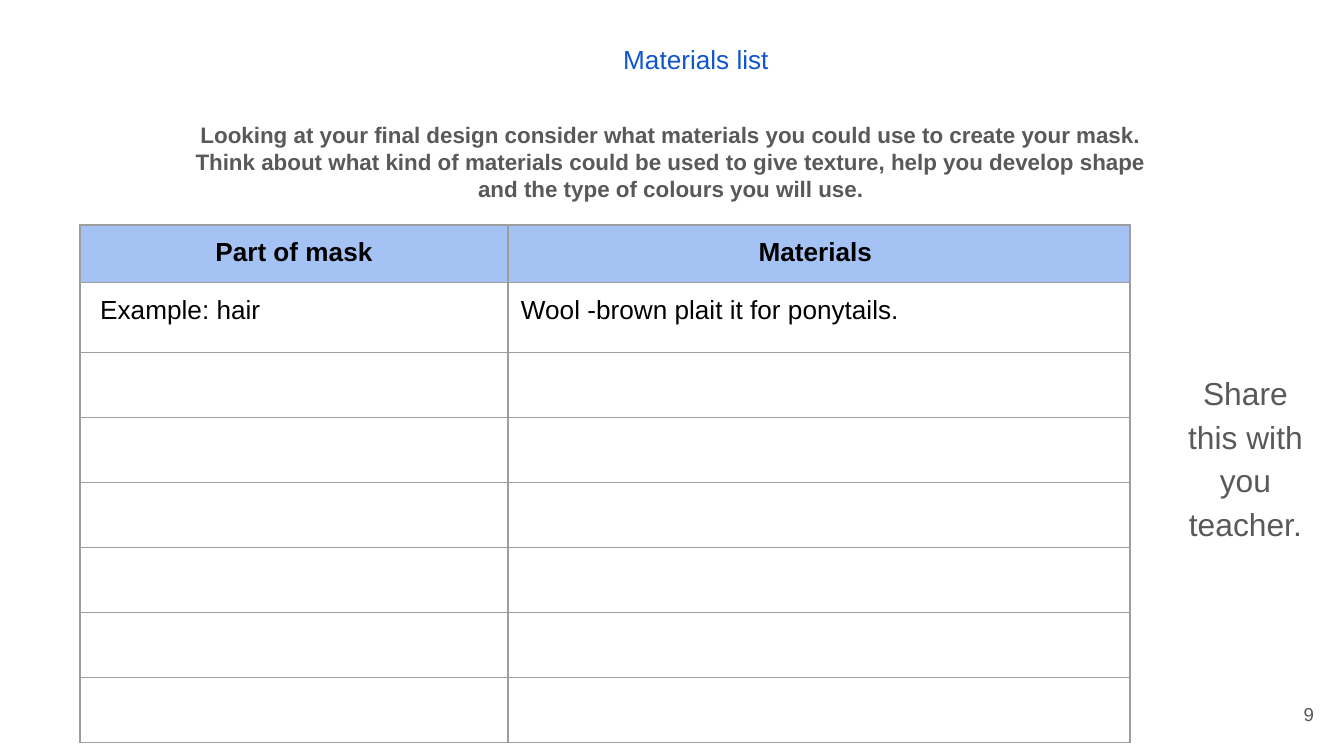
import pptx
import pptx.util
import pptx.dml.color
import pptx.enum.text
from lxml import etree

# Content
TITLE = "Materials list"
INTRO = [
    "Looking at your final design consider what materials you could use to create your mask.",
    "Think about what kind of materials could be used to give texture, "
    "help you develop shape and the type of colours you will use.",
]
REMINDER = "Share this with you teacher."
PAGE = "9"
HEADER = ["Part of mask", "Materials "]
EXAMPLE = [" Example: hair", "Wool -brown plait it for ponytails."]
EMPTY_ROWS = 6
ROWS = [HEADER, EXAMPLE] + [["", ""]] * EMPTY_ROWS

# Layout in px
SCALE = 914400 / 134.4
SLIDE = (1344, 756)
TABLE_AT = (80, 225)
COLS = [428, 622]
HEIGHTS = [56, 70] + [65] * EMPTY_ROWS
INSET = 13

COLORS = {"title": "1155CC", "grey": "595959", "black": "000000",
          "header": "A4C2F4", "border": "9E9E9E"}
FONT = "Arial"
ALIGN = pptx.enum.text.PP_ALIGN
ANCHOR = pptx.enum.text.MSO_ANCHOR


def px(n):
    return pptx.util.Emu(round(n * SCALE))


def rgb(name):
    return pptx.dml.color.RGBColor.from_string(COLORS[name])


def write(tf, lines, size=14, color="grey", bold=False, align=ALIGN.CENTER, spacing=None):
    for i, line in enumerate(lines):
        p = tf.add_paragraph() if i else tf.paragraphs[0]
        p.alignment = align
        if spacing:
            p.line_spacing = spacing
        r = p.add_run()
        r.text = line
        r.font.name = FONT
        r.font.size = pptx.util.Pt(size)
        r.font.bold = bold
        r.font.color.rgb = rgb(color)


def add_text(s, box, lines, inset_y=INSET, anchor=ANCHOR.TOP, **fmt):
    tf = s.shapes.add_textbox(*map(px, box)).text_frame
    tf.word_wrap = True
    tf.vertical_anchor = anchor
    tf.margin_left = tf.margin_right = px(INSET)
    tf.margin_top = tf.margin_bottom = px(inset_y)
    write(tf, lines, **fmt)


def add_borders(cell):
    ns = "{http://schemas.openxmlformats.org/drawingml/2006/main}"
    tcPr = cell._tc.get_or_add_tcPr()
    for i, side in enumerate(("lnL", "lnR", "lnT", "lnB")):
        ln = etree.Element(ns + side, w=str(pptx.util.Pt(0.75)))
        fill = etree.SubElement(ln, ns + "solidFill")
        etree.SubElement(fill, ns + "srgbClr", val=COLORS["border"])
        tcPr.insert(i, ln)


def add_materials_table(s):
    frame = s.shapes.add_table(len(ROWS), len(COLS), *map(px, TABLE_AT),
                               px(sum(COLS)), px(sum(HEIGHTS)))
    table = frame.table
    table.horz_banding = False
    for col, width in zip(table.columns, COLS):
        col.width = px(width)
    for i, (texts, height) in enumerate(zip(ROWS, HEIGHTS)):
        table.rows[i].height = px(height)
        header = i == 0
        for j, text in enumerate(texts):
            cell = table.cell(i, j)
            if header:
                cell.fill.solid()
                cell.fill.fore_color.rgb = rgb("header")
            else:
                cell.fill.background()
            add_borders(cell)
            if text:
                cell.margin_left = cell.margin_right = px(INSET)
                cell.margin_top = cell.margin_bottom = px(INSET)
                write(cell.text_frame, [text], color="black", bold=header,
                      align=ALIGN.CENTER if header else ALIGN.LEFT)


def main():
    prs = pptx.Presentation()
    prs.slide_width, prs.slide_height = map(px, SLIDE)
    s = prs.slides.add_slide(prs.slide_layouts[6])

    # Page number, heading, reminder and introduction
    add_text(s, (1246, 685, 81, 58), [PAGE], size=10, align=ALIGN.RIGHT,
             anchor=ANCHOR.MIDDLE)
    add_text(s, (358, 36, 676, 60), [TITLE], inset_y=7, color="title")
    add_text(s, (1164, 355, 163, 47), [REMINDER], size=17, spacing=1.15)
    add_text(s, (173, 108, 996, 108), INTRO, size=12, bold=True)

    # Table to fill in
    add_materials_table(s)
    prs.save("out.pptx")


if __name__ == "__main__":
    main()
